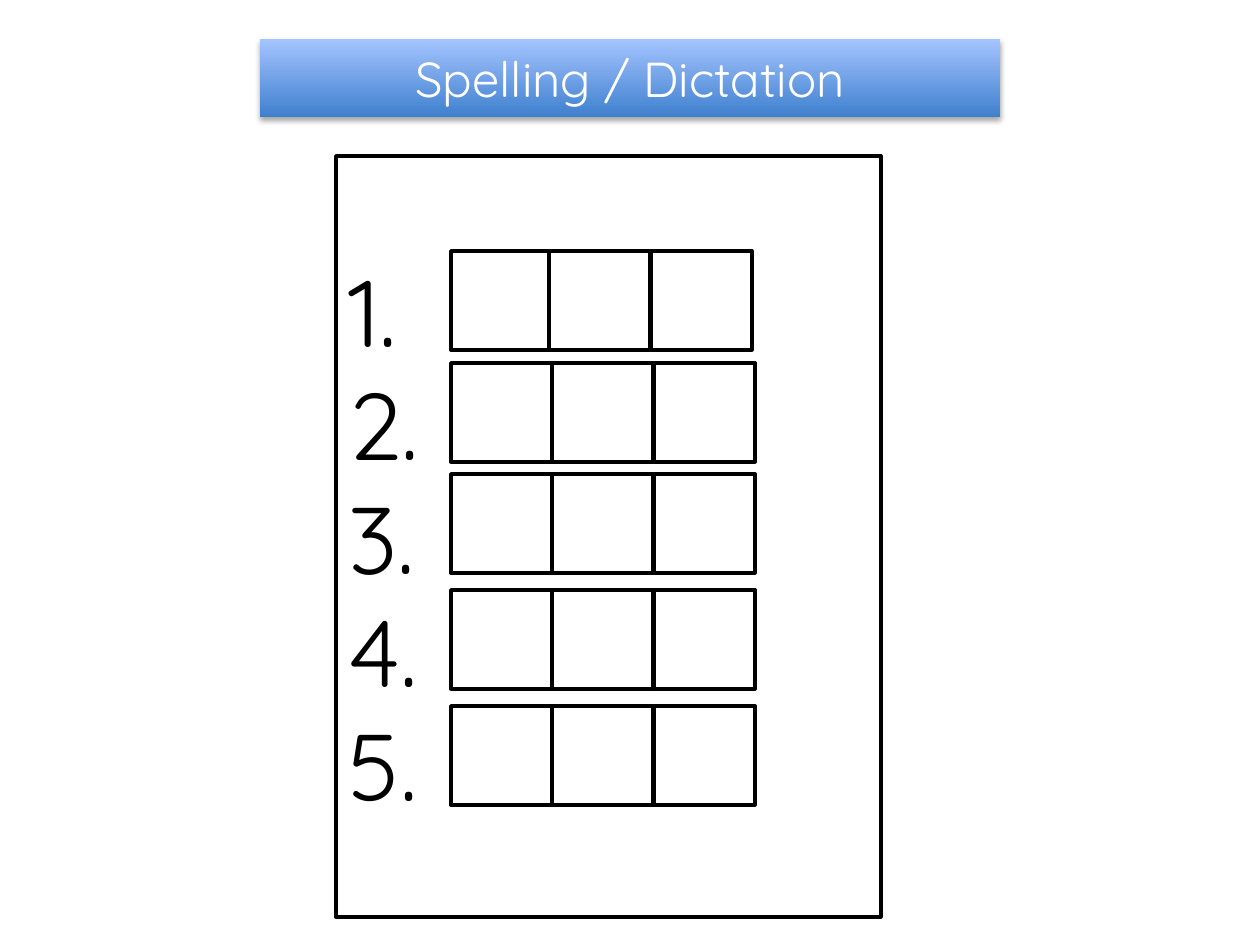
import pptx
import pptx.util
import pptx.dml.color
import pptx.enum.shapes
import pptx.enum.text
import lxml.etree

# Content
TITLE = "Spelling / Dictation"
NUMBERS = ["1.", "2.", "3.", "4.", "5."]

# Layout in px, 126 to the inch
SCALE = 914400 // 126
SLIDE = (1260, 945)
BANNER = (260, 39, 740, 78)
SHEET = (336, 156, 545, 761)
CELL = (101, 99)
ROW_TOPS = [251, 363, 474, 590, 706]
FIRST_ROW_LEFTS = [451, 549, 651]
OTHER_ROW_LEFTS = [451, 552, 654]

FONT = "Quicksand"
BLACK, WHITE = "000000", "FFFFFF"
BANNER_BOTTOM, BANNER_TOP = "3F80CE", "A4C4FF"
RECTANGLE = pptx.enum.shapes.MSO_SHAPE.RECTANGLE
ALIGN = pptx.enum.text.PP_ALIGN
MIDDLE = pptx.enum.text.MSO_ANCHOR.MIDDLE
DRAWING = "http://schemas.openxmlformats.org/drawingml/2006/main"


def px(*lengths):
    return [length * SCALE for length in lengths]


def color(value):
    return pptx.dml.color.RGBColor.from_string(value)


def add_box(shapes, place):
    box = shapes.add_shape(RECTANGLE, *px(*place))
    box.shadow.inherit = False
    box.fill.solid()
    box.fill.fore_color.rgb = color(WHITE)
    box.line.color.rgb = color(BLACK)
    box.line.width = pptx.util.Pt(2)
    return box


def write(shape, lines, size, ink, align):
    frame = shape.text_frame
    frame.text = "\n".join(lines)
    frame.word_wrap = True
    frame.auto_size = pptx.enum.text.MSO_AUTO_SIZE.NONE
    frame.vertical_anchor = MIDDLE
    for para in frame.paragraphs:
        para.alignment = align
        for span in para.runs:
            span.font.name = FONT
            span.font.size = pptx.util.Pt(size)
            span.font.color.rgb = color(ink)


def add_shadow(shape):
    shape.shadow.inherit = False
    effects = shape._element.spPr.find(f"{{{DRAWING}}}effectLst")
    effects.append(lxml.etree.fromstring(
        f'<a:outerShdw xmlns:a="{DRAWING}" blurRad="40000" dist="23000" '
        'dir="5400000" rotWithShape="0"><a:srgbClr val="000000">'
        '<a:alpha val="35000"/></a:srgbClr></a:outerShdw>'))


deck = pptx.Presentation()
deck.slide_width, deck.slide_height = px(*SLIDE)
page = deck.slides.add_slide(deck.slide_layouts[5])

# Title banner
banner = page.shapes.title
banner.left, banner.top, banner.width, banner.height = px(*BANNER)
banner.fill.gradient()
banner.fill.gradient_angle = 90
for stop, shade in zip(banner.fill.gradient_stops, (BANNER_BOTTOM, BANNER_TOP)):
    stop.color.rgb = color(shade)
add_shadow(banner)
write(banner, [TITLE], 28, WHITE, ALIGN.CENTER)

# Answer sheet with its numbers
sheet = add_box(page.shapes, SHEET)
write(sheet, NUMBERS, 54, BLACK, ALIGN.LEFT)

# One group of letter boxes for each number
for row, top in enumerate(ROW_TOPS):
    group = page.shapes.add_group_shape()
    for left in OTHER_ROW_LEFTS if row else FIRST_ROW_LEFTS:
        add_box(group.shapes, (left, top, *CELL))

deck.save("out.pptx")
